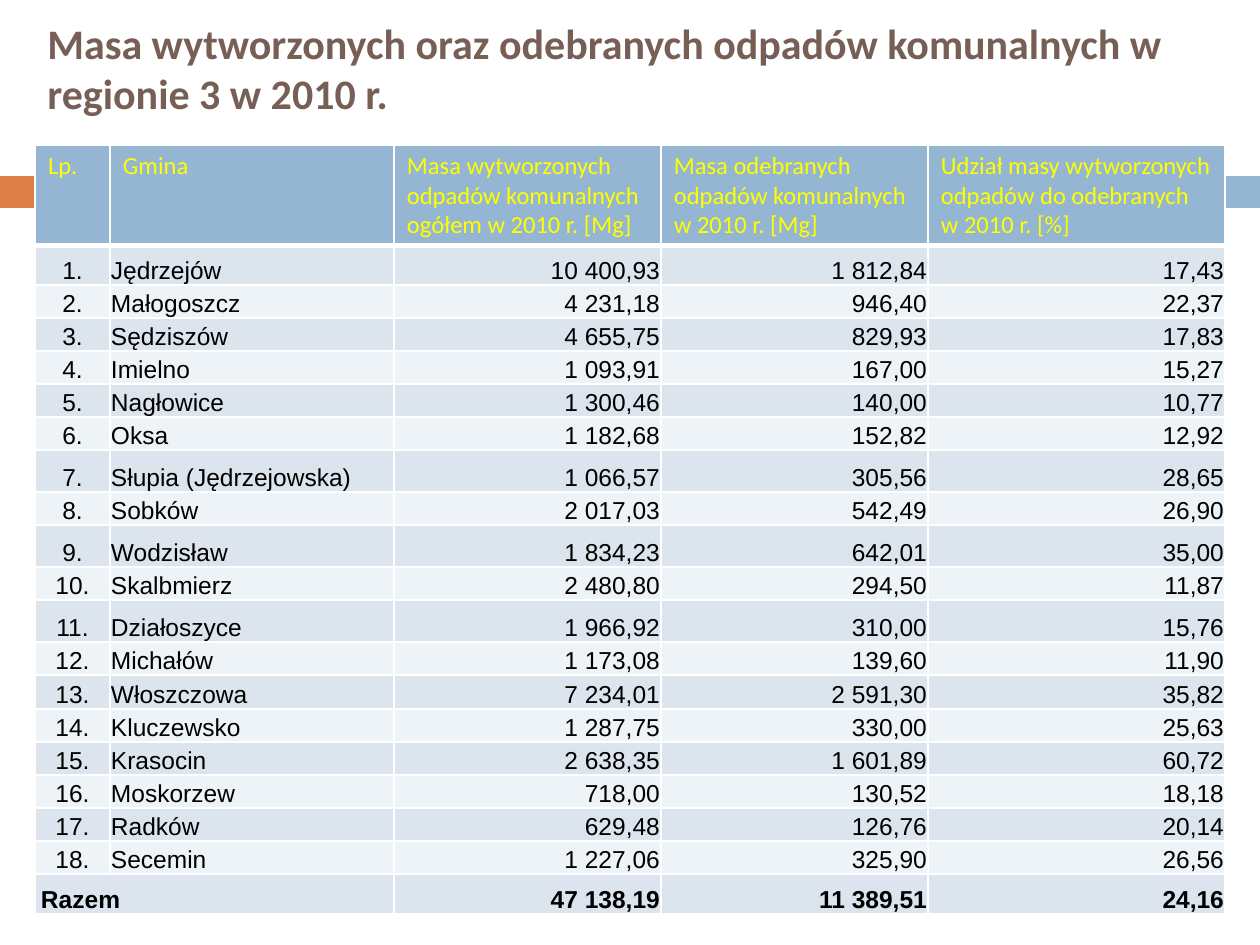
from dataclasses import dataclass

from lxml import etree
from pptx import Presentation
from pptx import util as u
from pptx.dml.color import RGBColor
from pptx.enum import shapes, text
from pptx.oxml.ns import qn

LEFT, CENTER, RIGHT = text.PP_ALIGN.LEFT, text.PP_ALIGN.CENTER, text.PP_ALIGN.RIGHT
TOP, MIDDLE, BOTTOM = text.MSO_ANCHOR.TOP, text.MSO_ANCHOR.MIDDLE, text.MSO_ANCHOR.BOTTOM

TITLE = "Masa wytworzonych oraz odebranych odpadów komunalnych w regionie 3 w 2010 r."
HEADINGS = [
    "Lp.",
    "Gmina",
    "Masa wytworzonych odpadów komunalnych ogółem w 2010 r. [Mg]",
    "Masa odebranych odpadów komunalnych w 2010 r. [Mg]",
    "Udział masy wytworzonych odpadów do odebranych w 2010 r. [%]",
]
MUNICIPALITIES = [
    ("Jędrzejów", "10 400,93", "1 812,84", "17,43"),
    ("Małogoszcz", "4 231,18", "946,40", "22,37"),
    ("Sędziszów", "4 655,75", "829,93", "17,83"),
    ("Imielno", "1 093,91", "167,00", "15,27"),
    ("Nagłowice", "1 300,46", "140,00", "10,77"),
    ("Oksa", "1 182,68", "152,82", "12,92"),
    ("Słupia (Jędrzejowska)", "1 066,57", "305,56", "28,65"),
    ("Sobków", "2 017,03", "542,49", "26,90"),
    ("Wodzisław", "1 834,23", "642,01", "35,00"),
    ("Skalbmierz", "2 480,80", "294,50", "11,87"),
    ("Działoszyce", "1 966,92", "310,00", "15,76"),
    ("Michałów", "1 173,08", "139,60", "11,90"),
    ("Włoszczowa", "7 234,01", "2 591,30", "35,82"),
    ("Kluczewsko", "1 287,75", "330,00", "25,63"),
    ("Krasocin", "2 638,35", "1 601,89", "60,72"),
    ("Moskorzew", "718,00", "130,52", "18,18"),
    ("Radków", "629,48", "126,76", "20,14"),
    ("Secemin", "1 227,06", "325,90", "26,56"),
]
TOTALS = ("47 138,19", "11 389,51", "24,16")

COLUMN_WIDTHS = [75, 284, 267, 267, 297]
ROW_HEIGHT = 33
SPECIAL_HEIGHTS = {0: 100, 1: 40, 7: 42, 9: 42, 11: 42, 13: 34, 19: 40}
ALIGNMENTS = [CENTER, LEFT, RIGHT, RIGHT, RIGHT]
HEADING_MARGINS = (13, 6, 13, 6)
BODY_MARGINS = (1, 1, 1, 0)
TOTAL_MARGINS = (6, 0, 6, 0)


@dataclass(frozen=True)
class Theme:
    title: str = "775F55"
    accent: str = "DD8047"
    header: str = "94B6D2"
    heading: str = "FFFF00"
    body: str = "000000"
    band_dark: str = "DCE5EE"
    band_light: str = "EEF3F7"
    border: str = "FFFFFF"
    heading_font: str = "Calibri"
    body_font: str = "Arial"
    title_size: int = 24
    table_size: int = 14


class Painter:
    def __init__(self, deck, theme):
        self.theme = theme
        self.page = deck.slides.add_slide(deck.slide_layouts[6])

    @staticmethod
    def px(length):
        return u.Emu(round(length * u.Inches(1) / 126))

    def frame(self, *lengths):
        return [self.px(length) for length in lengths]

    def add_span(self, para, words, font, size, color, bold=False, align=LEFT):
        para.alignment = align
        span = para.add_run()
        span.text = words
        span.font.name = font
        span.font.size = u.Pt(size)
        span.font.bold = bold
        span.font.color.rgb = RGBColor.from_string(color)

    def bar(self, left, top, width, height, color):
        box = self.page.shapes.add_shape(
            shapes.MSO_SHAPE.RECTANGLE, *self.frame(left, top, width, height))
        box.shadow.inherit = False
        box.fill.solid()
        box.fill.fore_color.rgb = RGBColor.from_string(color)
        box.line.fill.background()

    def title(self, left, top, width, height, words):
        box = self.page.shapes.add_textbox(*self.frame(left, top, width, height))
        box.text_frame.word_wrap = True
        box.text_frame.vertical_anchor = MIDDLE
        self.add_span(box.text_frame.paragraphs[0], words, self.theme.heading_font,
                      self.theme.title_size, self.theme.title, bold=True)

    def table(self, left, top, widths, heights):
        box = self.page.shapes.add_table(
            len(heights), len(widths), *self.frame(left, top, sum(widths), sum(heights)))
        for column, width in zip(box.table.columns, widths):
            column.width = self.px(width)
        for row, height in zip(box.table.rows, heights):
            row.height = self.px(height)
        return box.table

    def borders(self, cell, bottom, top):
        properties = cell._tc.get_or_add_tcPr()
        for side, points in (("L", 1), ("R", 1), ("T", top), ("B", bottom)):
            line = etree.SubElement(properties, qn(f"a:ln{side}"), w=str(u.Pt(points)))
            fill = etree.SubElement(line, qn("a:solidFill"))
            etree.SubElement(fill, qn("a:srgbClr"), val=self.theme.border)

    def cell(self, cell, words, fill, margins, anchor=BOTTOM, bottom=1, top=1, **style):
        self.borders(cell, bottom, top)
        cell.fill.solid()
        cell.fill.fore_color.rgb = RGBColor.from_string(fill)
        (cell.margin_left, cell.margin_top,
         cell.margin_right, cell.margin_bottom) = self.frame(*margins)
        cell.vertical_anchor = anchor
        para = cell.text_frame.paragraphs[0]
        self.add_span(para, words, size=self.theme.table_size, **style)
        return para


def draw_table(painter):
    theme = painter.theme
    last = len(MUNICIPALITIES) + 1
    heights = [SPECIAL_HEIGHTS.get(row, ROW_HEIGHT) for row in range(last + 1)]
    table = painter.table(35, 145, COLUMN_WIDTHS, heights)
    for column, heading in enumerate(HEADINGS):
        painter.cell(table.cell(0, column), heading, theme.header, HEADING_MARGINS, TOP,
                     bottom=3, font=theme.heading_font, color=theme.heading)

    body = {"font": theme.body_font, "color": theme.body}
    for row, values in enumerate(MUNICIPALITIES, 1):
        fill = theme.band_dark if row % 2 else theme.band_light
        for column, words in enumerate((f"{row}.", *values)):
            painter.cell(table.cell(row, column), words, fill, BODY_MARGINS,
                         top=3 if row == 1 else 1, align=ALIGNMENTS[column], **body)

    table.cell(last, 0).merge(table.cell(last, 1))
    para = painter.cell(table.cell(last, 0), "Razem", theme.band_dark, TOTAL_MARGINS,
                        bold=True, **body)
    para.line_spacing = 1.15
    for column, words in enumerate(TOTALS, 2):
        painter.cell(table.cell(last, column), words, theme.band_dark, BODY_MARGINS,
                     bold=True, align=RIGHT, **body)


def main():
    deck = Presentation()
    deck.slide_width, deck.slide_height = u.Inches(10), u.Inches(7.5)
    theme = Theme()
    painter = Painter(deck, theme)
    painter.bar(0, 176, 73, 32, theme.accent)
    painter.bar(82, 176, 1178, 32, theme.header)
    painter.title(35, 0, 1183, 136, TITLE)
    draw_table(painter)
    deck.save("out.pptx")


if __name__ == "__main__":
    main()
